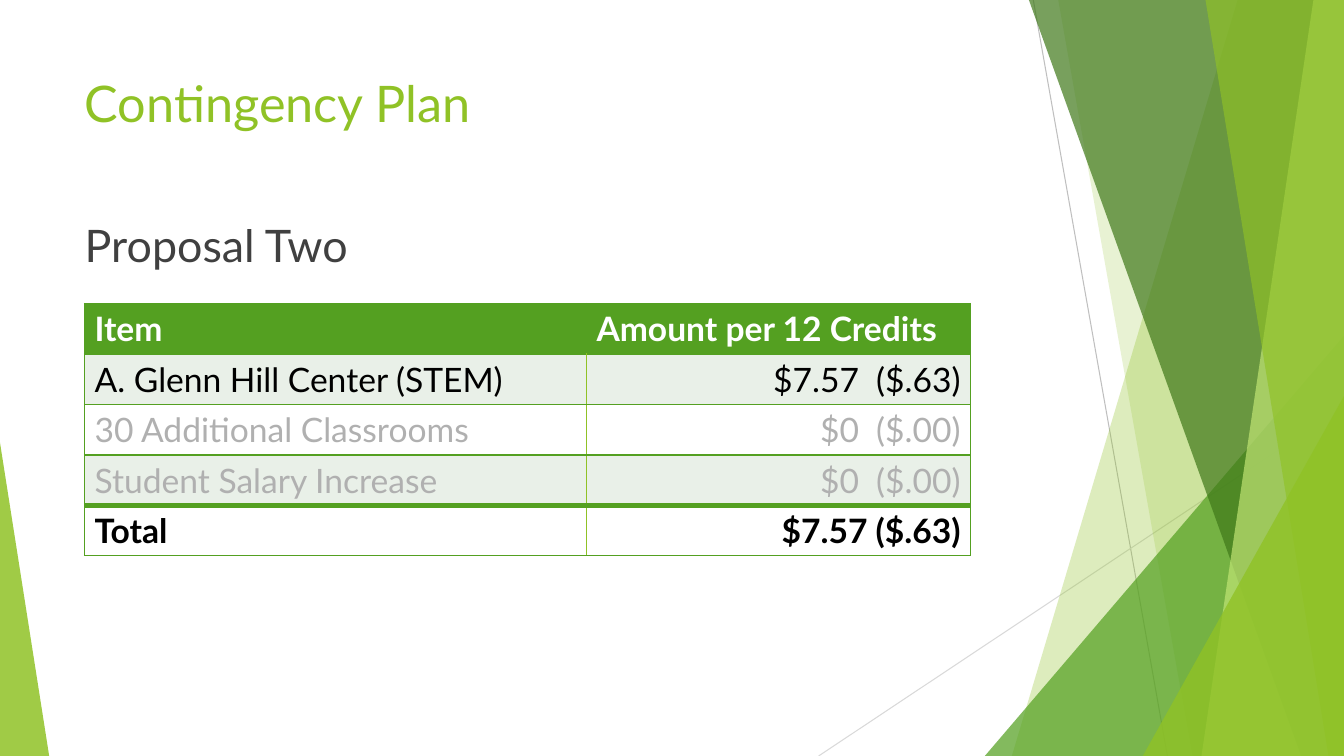
from dataclasses import dataclass

from lxml.etree import SubElement
from pptx import Presentation
from pptx.dml.color import RGBColor
from pptx.enum.shapes import MSO_CONNECTOR, MSO_SHAPE
from pptx.enum.text import MSO_ANCHOR, MSO_AUTO_SIZE, PP_ALIGN
from pptx.oxml.ns import qn
from pptx.util import Cm, Pt


@dataclass(frozen=True)
class Theme:
    font: str = "Lato"
    title_size: int = 36
    subtitle_size: int = 32
    table_size: int = 24
    lime: str = "90C226"
    pale_lime: str = "C0E474"
    green: str = "54A021"
    dark_green: str = "3F7819"
    band: str = "E9F0E8"
    white: str = "FFFFFF"
    black: str = "000000"
    text: str = "404040"
    muted: str = "B0B0B0"
    ray: str = "BFBFBF"
    pale_ray: str = "D9D9D9"


theme = Theme()


def style(paragraph, size, color, bold=False, align=PP_ALIGN.LEFT):
    paragraph.alignment = align
    paragraph.font.name = theme.font
    paragraph.font.size = Pt(size)
    paragraph.font.bold = bold
    paragraph.font.color.rgb = RGBColor.from_string(color)


def paint(facet, color, opacity):
    """Fill a facet with a see-through colour, without outline or shadow."""
    facet.shadow.inherit = False
    facet.line.fill.background()
    facet.fill.solid()
    facet.fill.fore_color.rgb = RGBColor.from_string(color)
    tint = facet.element.spPr.find(qn("a:solidFill"))[0]
    SubElement(tint, qn("a:alpha"), val=str(opacity * 1000))


WIDTH, HEIGHT = 33.87, 19.05
presentation = Presentation()
presentation.slide_width, presentation.slide_height = Cm(WIDTH), Cm(HEIGHT)
slide = presentation.slides.add_slide(presentation.slide_layouts[1])
shapes = slide.shapes

# Thin rays behind the facets
for x1, y1, x2, color in [
    (26.04, 0, 29.42, theme.ray),
    (WIDTH, 10.24, 20.63, theme.pale_ray),
]:
    ray = shapes.add_connector(
        MSO_CONNECTOR.STRAIGHT, Cm(x1), Cm(y1), Cm(x2), Cm(HEIGHT)
    )
    ray.line.width = Pt(0.75)
    ray.line.color.rgb = RGBColor.from_string(color)
    SubElement(ray.element.spPr, qn("a:effectLst"))

# Facets from back to front: bands give their top and bottom left corners,
# triangles give left, top, width and the place of the apex
facets = [
    ("band", (31.19, 25.5), theme.lime, 30),
    ("band", (26.67, 30.05), theme.lime, 20),
    ("triangle", (24.82, 8.46, 9.05, 1), theme.green, 72),
    ("band", (25.93, 32.79), theme.dark_green, 70),
    ("band", (33.1, 30.28), theme.pale_lime, 70),
    ("band", (30.38, 33.48), theme.lime, 65),
    ("triangle", (28.8, 9.98, 5.07, 1), theme.lime, 80),
    ("triangle", (0, 11.15, 1.24, 0), theme.lime, 85),
]
for kind, geometry, color, opacity in facets:
    if kind == "band":
        top_x, bottom_x = geometry
        outline = shapes.build_freeform(Cm(top_x), 0)
        corners = [(WIDTH, 0), (WIDTH, HEIGHT), (bottom_x, HEIGHT)]
        outline.add_line_segments([(Cm(x), Cm(y)) for x, y in corners], close=True)
        facet = outline.convert_to_shape()
    else:
        left, top, width, apex = geometry
        facet = shapes.add_shape(
            MSO_SHAPE.ISOSCELES_TRIANGLE,
            Cm(left), Cm(top), Cm(width), Cm(HEIGHT - top),
        )
        facet.adjustments[0] = apex
    paint(facet, color, opacity)

# Headings, brought in front of the facets
title, subtitle = shapes.title, slide.placeholders[1]
for heading, wording, top, height, size, color in [
    (title, "Contingency Plan", 1.7, 3.66, theme.title_size, theme.lime),
    (subtitle, "Proposal Two", 5.36, 2.21, theme.subtitle_size, theme.text),
]:
    heading.left, heading.top = Cm(1.88), Cm(top)
    heading.width, heading.height = Cm(23.88), Cm(height)
    frame = heading.text_frame
    frame.text = wording
    frame.word_wrap = True
    frame.auto_size = MSO_AUTO_SIZE.NONE
    frame.vertical_anchor = MSO_ANCHOR.TOP
    style(frame.paragraphs[0], size, color)
    heading.element.getparent().append(heading.element)

unbulleted = subtitle.text_frame.paragraphs[0]._p.get_or_add_pPr()
unbulleted.set("marL", "0")
unbulleted.set("indent", "0")
unbulleted.insert_element_before(
    unbulleted.makeelement(qn("a:buNone")), "a:tabLst", "a:defRPr", "a:extLst"
)

# Cost table
costs = [
    ("Item", "Amount per 12 Credits", theme.white, theme.green),
    ("A. Glenn Hill Center (STEM)", "$7.57  ($.63)", theme.black, theme.band),
    ("30 Additional Classrooms", "$0  ($.00)", theme.muted, theme.white),
    ("Student Salary Increase", "$0  ($.00)", theme.muted, theme.band),
    ("Total", "$7.57 ($.63)", theme.black, theme.white),
]
column_widths = [12.65, 9.68]
row_height = 1.27
last = len(costs) - 1
cost_table = shapes.add_table(
    len(costs), 2, Cm(2.13), Cm(7.65),
    Cm(sum(column_widths)), Cm(row_height * len(costs)),
).table
for column, width in zip(cost_table.columns, column_widths):
    column.width = Cm(width)

for r, (item, amount, ink, background) in enumerate(costs):
    cost_table.rows[r].height = Cm(row_height)
    divider = theme.green if r == 0 else theme.lime
    for c, wording in enumerate((item, amount)):
        cell = cost_table.cell(r, c)
        cell.text = wording
        cell.vertical_anchor = MSO_ANCHOR.TOP
        align = PP_ALIGN.RIGHT if c and r else PP_ALIGN.LEFT
        style(cell.text_frame.paragraphs[0], theme.table_size, ink,
              r in (0, last), align)
        borders = {
            "a:lnL": (divider if c else theme.green, 1),
            "a:lnR": (theme.green if c else divider, 1),
            "a:lnT": (theme.green, 4 if r == last else 1),
            "a:lnB": (theme.green, 4 if r == last - 1 else 1),
        }
        for side, (color, points) in borders.items():
            border = SubElement(
                cell._tc.get_or_add_tcPr(), qn(side), w=str(Pt(points))
            )
            SubElement(SubElement(border, qn("a:solidFill")),
                       qn("a:srgbClr"), val=color)
        cell.fill.solid()
        cell.fill.fore_color.rgb = RGBColor.from_string(background)

presentation.save("out.pptx")
